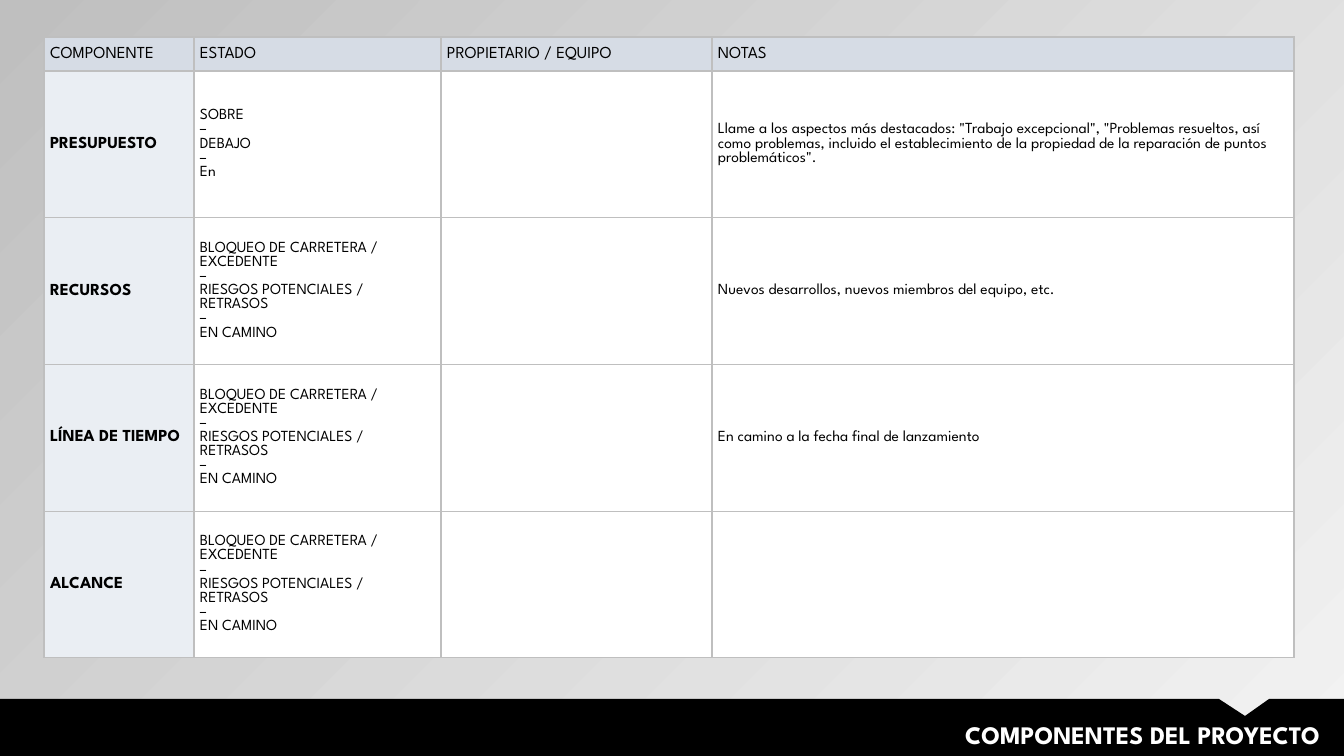
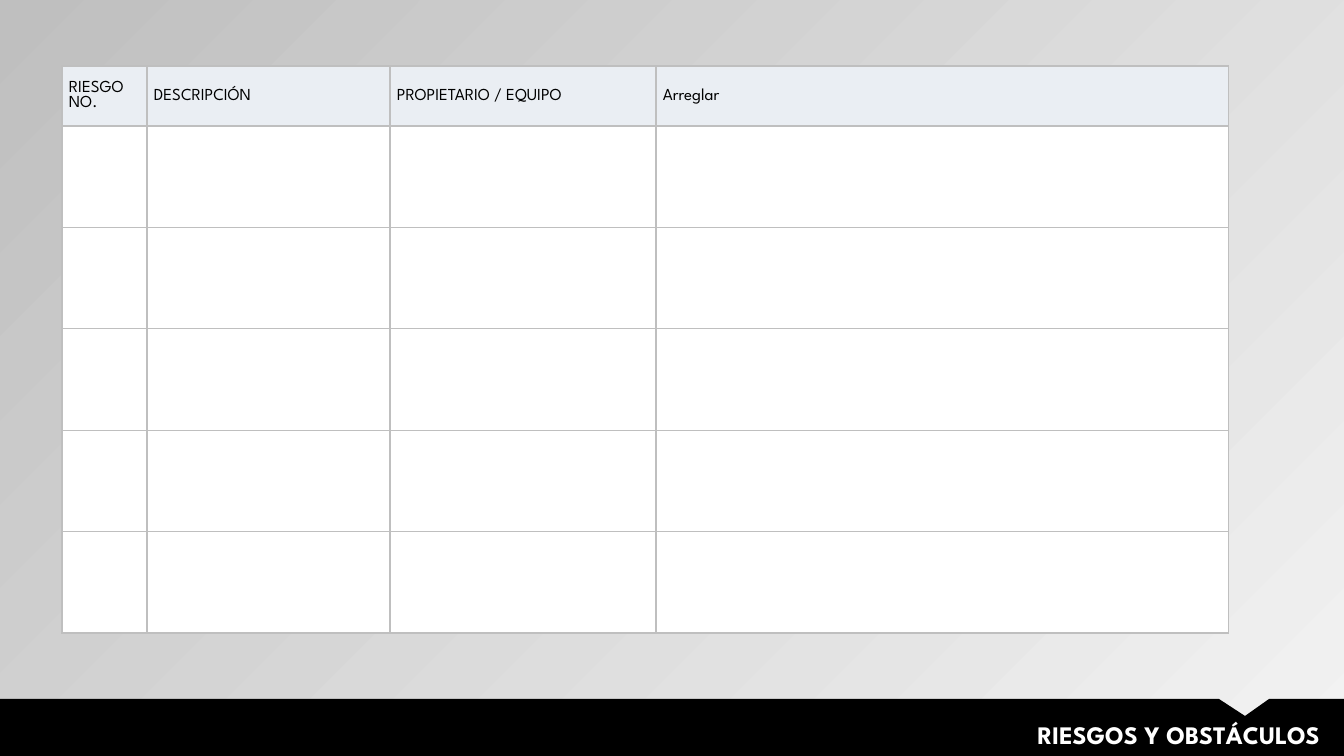
"""Builds two project status slides, each a table above a notched title band."""
from lxml.etree import SubElement
from pptx import Presentation
from pptx.dml.color import RGBColor
from pptx.enum.text import MSO_ANCHOR, MSO_AUTO_SIZE, PP_ALIGN
from pptx.oxml import parse_xml
from pptx.oxml.ns import nsdecls, qn
from pptx.util import Emu, Pt

SCALE = 914400 / 100.8
WIDTH, HEIGHT = 1344, 756
FONT = "League Spartan"
COLORS = {
    "light": "F2F2F2",
    "grey": "BFBFBF",
    "header": "D6DCE5",
    "pale": "EAEEF3",
    "white": "FFFFFF",
    "black": "000000",
}
BAND = [(0, 699), (1219, 699), (1245, 716), (1269, 699),
        (WIDTH, 699), (WIDTH, HEIGHT), (0, HEIGHT)]
TITLE_AREA = (417, 714, 913, 40)

PROGRESS = ["BLOQUEO DE CARRETERA / EXCEDENTE", "–",
            "RIESGOS POTENCIALES / RETRASOS", "–", "EN CAMINO"]
SLIDES = [
    {
        "title": "COMPONENTES DEL PROYECTO",
        "area": (44, 37, 621),
        "columns": [150, 247, 271, 582],
        "header_height": 34,
        "inset": 6,
        "header_fill": "header",
        "label_fill": "pale",
        "rows": [
            [["COMPONENTE"], ["ESTADO"], ["PROPIETARIO / EQUIPO"], ["NOTAS"]],
            [["PRESUPUESTO"], ["SOBRE", "–", "DEBAJO", "–", "En"], [],
             ['Llame a los aspectos más destacados: "Trabajo excepcional", '
              '"Problemas resueltos, así como problemas, incluido el '
              'establecimiento de la propiedad de la reparación de puntos '
              'problemáticos".']],
            [["RECURSOS"], PROGRESS, [],
             ["Nuevos desarrollos, nuevos miembros del equipo, etc."]],
            [["LÍNEA DE TIEMPO"], PROGRESS, [],
             ["En camino a la fecha final de lanzamiento"]],
            [["ALCANCE"], PROGRESS, [], []],
        ],
    },
    {
        "title": "RIESGOS Y OBSTÁCULOS",
        "area": (62, 66, 567),
        "columns": [85, 243, 266, 573],
        "header_height": 60,
        "inset": 7,
        "header_fill": "pale",
        "label_fill": "white",
        "rows": [
            [["RIESGO NO."], ["DESCRIPCIÓN"], ["PROPIETARIO / EQUIPO"], ["Arreglar"]],
            *[[[]] * 4] * 5,
        ],
    },
]


def px(length):
    return Emu(round(length * SCALE))


def color(name):
    return RGBColor.from_string(COLORS[name])


def write(frame, lines, size, bold, ink, align=PP_ALIGN.LEFT):
    for index, line in enumerate(lines):
        para = frame.add_paragraph() if index else frame.paragraphs[0]
        para.alignment = align
        span = para.add_run()
        span.text = line
        span.font.name = FONT
        span.font.size = Pt(size)
        span.font.bold = bold
        span.font.color.rgb = color(ink)


def paint_background(page):
    fill = page.background.fill
    fill.gradient()
    fill.gradient_angle = 135
    for stop, name in zip(fill.gradient_stops, ("light", "grey")):
        stop.color.rgb = color(name)
    first = next(page.element.iter(qn("a:srgbClr")))
    SubElement(first, qn("a:alpha")).set("val", "40000")


def add_borders(cell):
    properties = cell._tc.get_or_add_tcPr()
    for index, side in enumerate("LRTB"):
        properties.insert(index, parse_xml(
            f'<a:ln{side} {nsdecls("a")} w="12700"><a:solidFill>'
            f'<a:srgbClr val="{COLORS["grey"]}"/></a:solidFill></a:ln{side}>'))


def add_status_table(page, content):
    left, top, height = content["area"]
    rows, columns = content["rows"], content["columns"]
    table = page.shapes.add_table(len(rows), len(columns), px(left), px(top),
                                  px(sum(columns)), px(height)).table
    table.first_row = table.horz_banding = False
    for column, width in zip(table.columns, columns):
        column.width = px(width)
    header_height = content["header_height"]
    body_height = (height - header_height) / (len(rows) - 1)
    for r, row in enumerate(rows):
        table.rows[r].height = px(body_height if r else header_height)
        for c, lines in enumerate(row):
            cell = table.cell(r, c)
            label = r > 0 and c == 0
            fill = "white" if r and c else content["label_fill" if r else "header_fill"]
            cell.fill.solid()
            cell.fill.fore_color.rgb = color(fill)
            cell.vertical_anchor = MSO_ANCHOR.MIDDLE
            cell.margin_left = cell.margin_right = px(content["inset"])
            cell.margin_top = cell.margin_bottom = 0
            add_borders(cell)
            write(cell.text_frame, lines, 11 if r and c else 12, label, "black")


def add_title_band(page, title):
    outline = page.shapes.build_freeform(*BAND[0], scale=SCALE)
    outline.add_line_segments(BAND[1:], close=True)
    band = outline.convert_to_shape()
    band.shadow.inherit = False
    band.fill.solid()
    band.fill.fore_color.rgb = color("black")
    band.line.fill.background()
    box = page.shapes.add_textbox(*map(px, TITLE_AREA))
    box.text_frame.word_wrap = True
    box.text_frame.auto_size = MSO_AUTO_SIZE.SHAPE_TO_FIT_TEXT
    write(box.text_frame, [title], 18, True, "white", PP_ALIGN.RIGHT)


def main():
    deck = Presentation()
    deck.slide_width, deck.slide_height = px(WIDTH), px(HEIGHT)
    for content in SLIDES:
        page = deck.slides.add_slide(deck.slide_layouts[6])
        paint_background(page)
        add_status_table(page, content)
        add_title_band(page, content["title"])
    deck.save("out.pptx")


if __name__ == "__main__":
    main()
